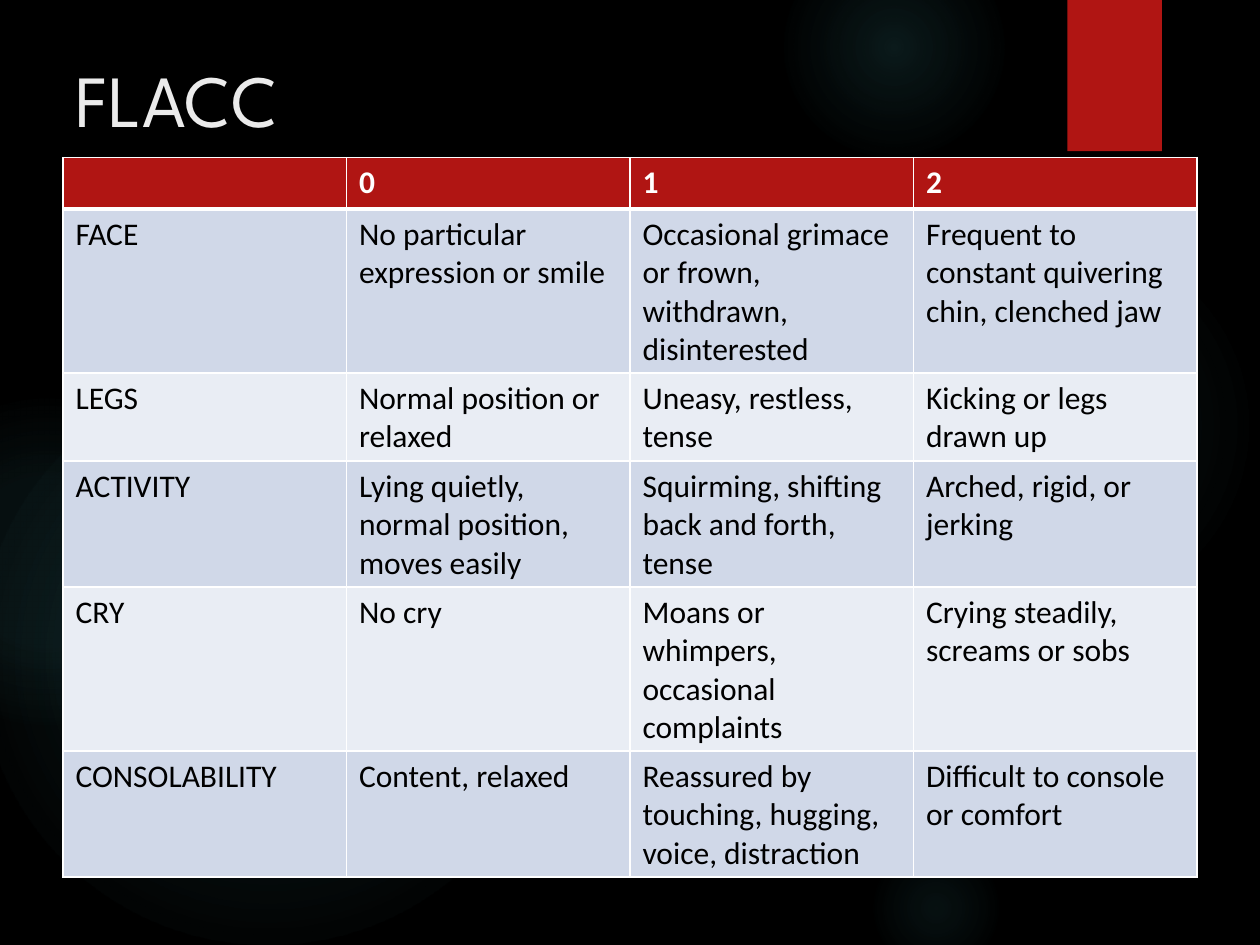
from dataclasses import dataclass
from lxml.etree import SubElement
from pptx import Presentation
from pptx.dml.color import RGBColor
from pptx.enum.shapes import MSO_SHAPE
from pptx.enum.text import MSO_ANCHOR
from pptx.oxml import parse_xml
from pptx.oxml.ns import nsdecls, qn
from pptx.util import Pt


@dataclass(frozen=True)
class Theme:
    background: str = "000000"
    glow: str = "50B9C1"
    accent: str = "B01513"
    title: str = "EBEBEB"
    header_text: str = "FFFFFF"
    body_text: str = "000000"
    border: str = "FFFFFF"
    bands: tuple = ("D0D8E8", "E9EDF4")
    title_font: str = "League Spartan"
    body_font: str = "Calibri"
    title_size: float = 42
    body_size: float = 18


# left, top, diameter, then (position %, opacity %) stops
GLOWS = [
    (496, 132, 222, ((0, 7), (36, 6), (69, 0))),
    (448, -36, 126, ((0, 14), (36, 7), (73, 0))),
    (496, 480, 78, ((0, 9), (36, 5), (66, 0))),
    (-12, 210, 330, ((0, 11), (36, 10), (75, 0))),
    (-66, 228, 186, ((0, 8), (36, 8), (72, 0))),
]

SCALE = [
    ("", "0", "1", "2"),
    ("FACE", "No particular expression or smile",
     "Occasional grimace or frown, withdrawn, disinterested",
     "Frequent to constant quivering chin, clenched jaw"),
    ("LEGS", "Normal position or relaxed", "Uneasy, restless, tense",
     "Kicking or legs drawn up"),
    ("ACTIVITY", "Lying quietly, normal position, moves easily",
     "Squirming, shifting back and forth, tense", "Arched, rigid, or jerking"),
    ("CRY", "No cry", "Moans or whimpers, occasional complaints",
     "Crying steadily, screams or sobs"),
    ("CONSOLABILITY", "Content, relaxed",
     "Reassured by touching, hugging, voice, distraction",
     "Difficult to console or comfort"),
]
ROW_HEIGHTS = (29.5, 93.6, 50.4, 72, 93.6, 72)


class SlideBuilder:
    def __init__(self, s, theme):
        self.s, self.theme = s, theme
        fill = s.background.fill
        fill.solid()
        fill.fore_color.rgb = RGBColor.from_string(theme.background)

    def shape(self, kind, left, top, width, height):
        sp = self.s.shapes.add_shape(kind, *map(Pt, (left, top, width, height)))
        sp.shadow.inherit = False
        sp.line.fill.background()
        return sp

    def glow(self, left, top, size, stops):
        """Add a circle that fades out from its centre."""
        sp = self.shape(MSO_SHAPE.OVAL, left, top, size, size)
        sp.fill.background()
        stop_xml = "".join(
            f'<a:gs pos="{pos * 1000}"><a:srgbClr val="{self.theme.glow}">'
            f'<a:alpha val="{alpha * 1000}"/></a:srgbClr></a:gs>'
            for pos, alpha in stops)
        grad = parse_xml(
            f'<a:gradFill {nsdecls("a")} rotWithShape="1"><a:gsLst>{stop_xml}</a:gsLst>'
            '<a:path path="circle"><a:fillToRect l="50000" t="50000" r="50000" '
            'b="50000"/></a:path></a:gradFill>')
        no_fill = sp.element.spPr.find(qn("a:noFill"))
        no_fill.getparent().replace(no_fill, grad)

    def bar(self, left, top, width, height):
        sp = self.shape(MSO_SHAPE.RECTANGLE, left, top, width, height)
        sp.fill.solid()
        sp.fill.fore_color.rgb = RGBColor.from_string(self.theme.accent)

    def add_text(self, tf, text, color, **formats):
        r = tf.paragraphs[0].add_run()
        r.text = text
        for name, value in formats.items():
            setattr(r.font, name, value)
        r.font.color.rgb = RGBColor.from_string(color)

    def title(self, text, left, top, width, height):
        sp = self.s.shapes.add_textbox(*map(Pt, (left, top, width, height)))
        tf = sp.text_frame
        tf.word_wrap = True
        tf.vertical_anchor = MSO_ANCHOR.MIDDLE
        t = self.theme
        self.add_text(tf, text, t.title, name=t.title_font, size=Pt(t.title_size))

    def borders(self, cell, **widths):
        tc_pr = cell._tc.get_or_add_tcPr()
        for i, (side, width) in enumerate(widths.items()):
            ln = parse_xml(
                f'<a:ln{side} {nsdecls("a")} w="{Pt(width)}"/>')
            SubElement(SubElement(ln, qn("a:solidFill")), qn("a:srgbClr"),
                       val=self.theme.border)
            tc_pr.insert(i, ln)

    def table(self, rows, heights, left, top, width):
        t = self.theme
        columns = len(rows[0])
        table = self.s.shapes.add_table(
            len(rows), columns, *map(Pt, (left, top, width, sum(heights)))).table
        for column in table.columns:
            column.width = Pt(width / columns)
        for i, (texts, height) in enumerate(zip(rows, heights)):
            table.rows[i].height = Pt(height)
            header = i == 0
            fill = t.accent if header else t.bands[(i - 1) % 2]
            color = t.header_text if header else t.body_text
            for j, text in enumerate(texts):
                cell = table.cell(i, j)
                cell.fill.solid()
                cell.fill.fore_color.rgb = RGBColor.from_string(fill)
                self.borders(cell, L=1, R=1, T=3 if i == 1 else 1,
                             B=3 if header else 1)
                if text:
                    self.add_text(cell.text_frame, text, color, name=t.body_font,
                                  size=Pt(t.body_size), bold=header)


def main():
    prs = Presentation()
    prs.slide_width, prs.slide_height = Pt(720), Pt(540)
    slide = SlideBuilder(prs.slides.add_slide(prs.slide_layouts[6]), Theme())
    for glow in GLOWS:
        slide.glow(*glow)
    slide.bar(610, 0, 54, 86.4)
    slide.title("FLACC", 36, 21.6, 648, 68.4)
    slide.table(SCALE, ROW_HEIGHTS, 36, 90, 648)
    prs.save("out.pptx")


if __name__ == "__main__":
    main()
